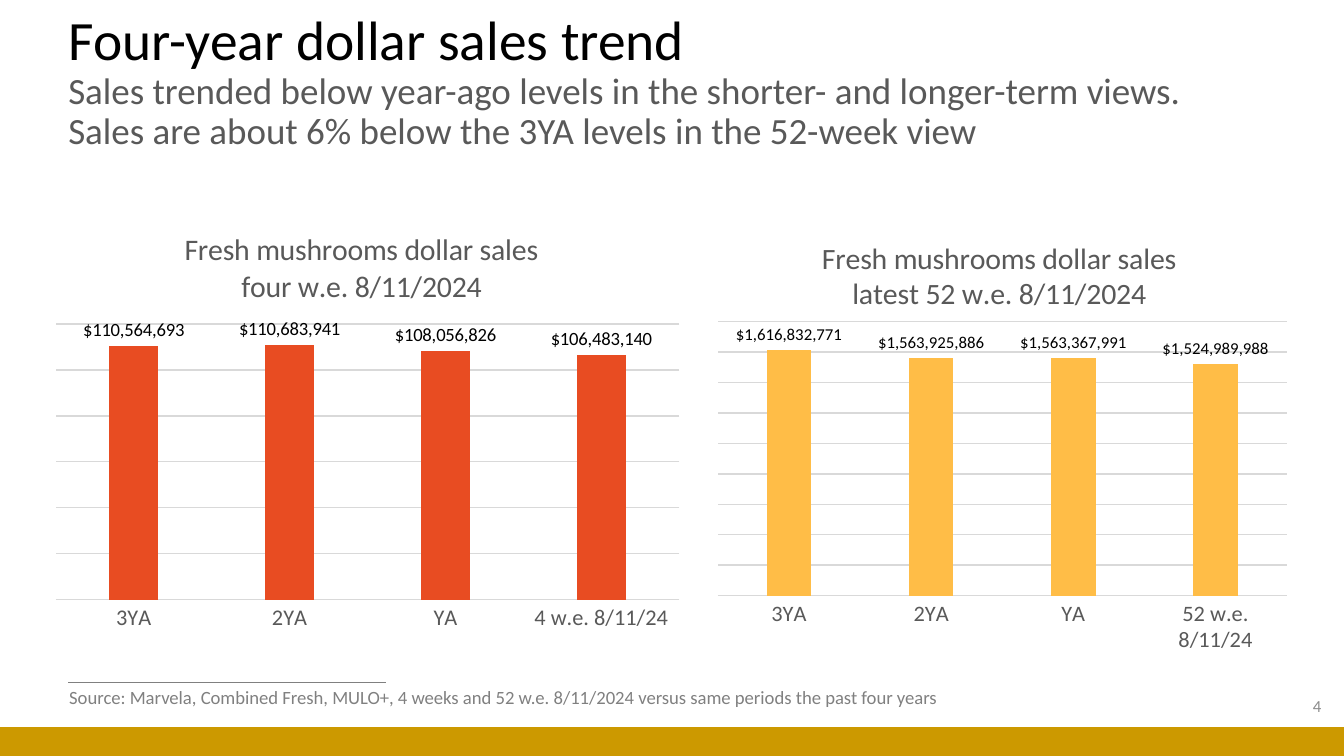
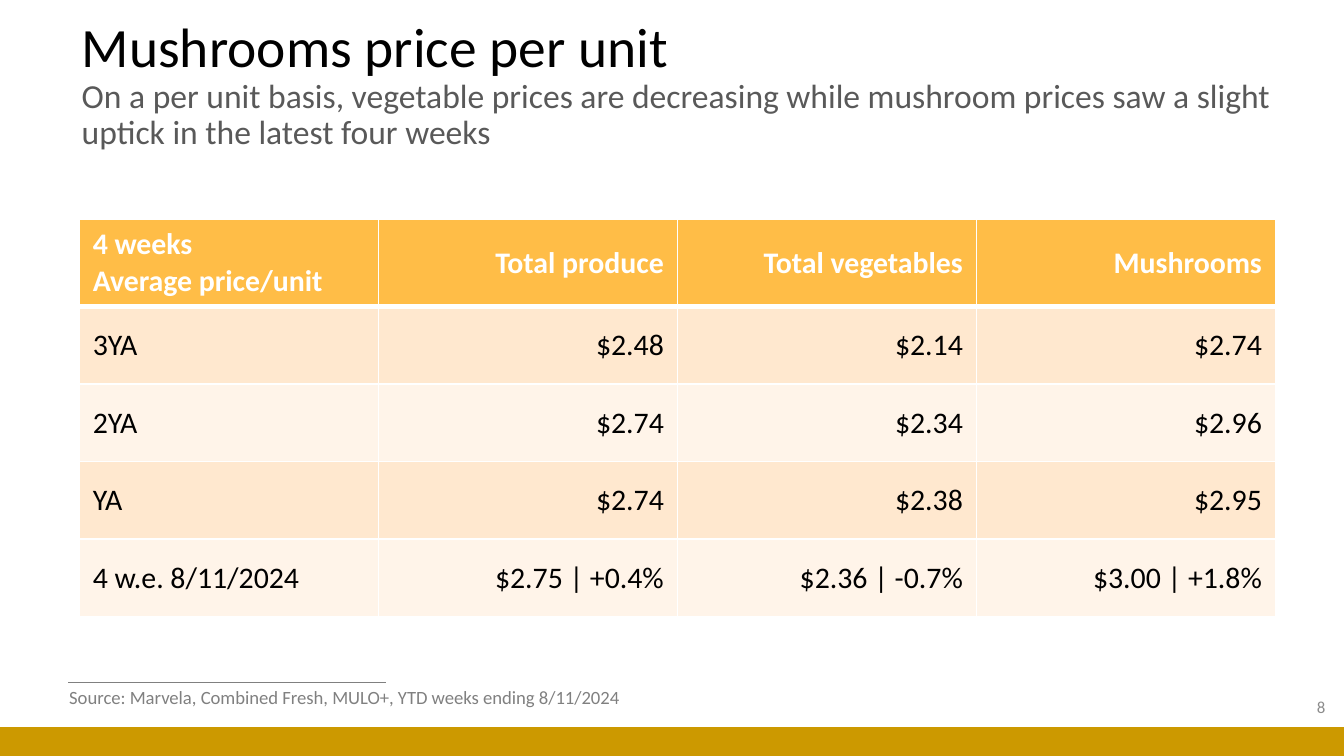
import pptx
import pptx.util
import pptx.chart.data
import pptx.dml.color
import pptx.enum.chart
import pptx.enum.shapes
import pptx.enum.text
import pptx.oxml
import pptx.oxml.ns

Pt = pptx.util.Pt
ALIGN = pptx.enum.text.PP_ALIGN
ANCHOR = pptx.enum.text.MSO_ANCHOR
FONT = "Calibri"
MONEY = r"\$#,##0"
NS = pptx.oxml.ns.nsdecls("a", "c")
COLORS = {
    "title": "000000", "subtitle": "595959", "source": "808080", "number": "8C8C8C",
    "band": "CC9900", "grid": "D9D9D9", "orange": "E84C22", "yellow": "FFBD47",
    "odd": "FFE8CF", "even": "FFF4E9", "white": "FFFFFF",
}


def rgb(name):
    """Return the named colour."""
    return pptx.dml.color.RGBColor.from_string(COLORS[name])


def style_font(font, size, color, bold=False):
    """Apply the deck's typeface with a size, colour and weight."""
    font.name, font.size, font.bold = FONT, Pt(size), bold
    font.color.rgb = rgb(color)


def write(tf, text, size=16, color="title", bold=False, align=ALIGN.LEFT, spacing=None):
    """Add text to the frame's first paragraph, breaking it at newlines."""
    p = tf.paragraphs[0]
    p.alignment, p.line_spacing = align, spacing
    for i, line in enumerate(text.split("\n")):
        if i:
            p.add_line_break()
        if line:
            r = p.add_run()
            r.text = line
            style_font(r.font, size, color, bold)


def add_box(s, box, anchor=ANCHOR.MIDDLE, wrap=True):
    """Add an empty text box and return its frame."""
    tf = s.shapes.add_textbox(*map(Pt, box)).text_frame
    tf.word_wrap, tf.vertical_anchor = wrap, anchor
    return tf


def add_title(s, box, title, subtitle, size):
    """Add the title with its grey subtitle below."""
    tf = add_box(s, box)
    write(tf, title + "\n", size=29.7, spacing=0.9)
    write(tf, subtitle, size=size, color="subtitle", spacing=0.9)


def add_footer(s, source, width, number, number_box):
    """Add the rule, band, source line and slide number."""
    rule = s.shapes.add_connector(
        pptx.enum.shapes.MSO_CONNECTOR.STRAIGHT, Pt(36.7), Pt(365.8), Pt(206.6), Pt(365.8))
    rule.line.color.rgb, rule.line.width = rgb("source"), Pt(0.5)
    rule._element.spPr.append(pptx.oxml.parse_xml(f"<a:effectLst {NS}/>"))
    band = s.shapes.add_shape(
        pptx.enum.shapes.MSO_SHAPE.RECTANGLE, Pt(0), Pt(389.5), Pt(720), Pt(15.5))
    band.shadow.inherit = False
    band.fill.solid()
    band.fill.fore_color.rgb = rgb("band")
    band.line.fill.background()
    write(add_box(s, number_box), str(number), size=9, color="number", align=ALIGN.RIGHT)
    tf = add_box(s, (30, 363.9, width, 19.4), anchor=ANCHOR.TOP, wrap=False)
    tf.auto_size = pptx.enum.text.MSO_AUTO_SIZE.SHAPE_TO_FIT_TEXT
    write(tf, source, size=10, color="source")


def place(parent, before, values, inner=False):
    """Put a manual layout, in chart fractions, before the named child elements."""
    target = '<c:layoutTarget val="inner"/>' if inner else ""
    modes = "".join(f'<c:{k}Mode val="edge"/>' for k in "xy")
    parts = "".join(f'<c:{k} val="{v}"/>' for k, v in zip("xywh", values))
    for old in parent.findall(pptx.oxml.ns.qn("c:layout")):
        parent.remove(old)
    layout = pptx.oxml.parse_xml(
        f"<c:layout {NS}><c:manualLayout>{target}{modes}{parts}</c:manualLayout></c:layout>")
    next(e for e in parent if e.tag in map(pptx.oxml.ns.qn, before)).addprevious(layout)


def add_sales_chart(s, box, title, cats, vals, color, top, step, plot, label_size, title_at=None):
    """Add a column chart of dollar sales."""
    data = pptx.chart.data.CategoryChartData(number_format=MONEY)
    data.categories = cats
    data.add_series("Series 1", vals)
    chart = s.shapes.add_chart(
        pptx.enum.chart.XL_CHART_TYPE.COLUMN_CLUSTERED, *map(Pt, box), data).chart
    style_font(chart.font, 10, "title")
    chart.has_legend = False
    chart.has_title = True
    write(chart.chart_title.text_frame, title, color="subtitle", align=ALIGN.CENTER)
    chart.chart_title.include_in_layout = False
    if title_at:
        place(chart.chart_title._element, ("c:overlay",), title_at)
    area = chart._chartSpace.chart.plotArea
    place(area, ("c:barChart",), plot, inner=True)

    cat, val = chart.category_axis, chart.value_axis
    cat.major_tick_mark = pptx.enum.chart.XL_TICK_MARK.NONE
    style_font(cat.tick_labels.font, 12, "subtitle")
    val.visible = False
    val.minimum_scale, val.maximum_scale, val.major_unit = 0, top, step
    val.has_major_gridlines = True
    for line in (cat.format.line, val.major_gridlines.format.line):
        line.color.rgb, line.width = rgb("grid"), Pt(0.75)

    bars = chart.plots[0]
    bars.gap_width, bars.overlap, bars.vary_by_categories = 219, -27, False
    fill = bars.series[0].format.fill
    fill.solid()
    fill.fore_color.rgb = rgb(color)
    labels = bars.series[0].data_labels
    labels.show_value = True
    labels.number_format, labels.number_format_is_linked = MONEY, False
    labels.position = pptx.enum.chart.XL_LABEL_POSITION.OUTSIDE_END
    style_font(labels.font, label_size, "title")


def add_border(cell, side, width):
    """Draw one white border of a cell."""
    pr = cell._tc.get_or_add_tcPr()
    pr.append(pptx.oxml.parse_xml(
        f'<a:ln{side} {NS} w="{Pt(width)}"><a:solidFill>'
        f'<a:srgbClr val="{COLORS["white"]}"/></a:solidFill></a:ln{side}>'))


def add_price_table(s, box, rows, header_height):
    """Add the price table with a yellow header and banded rows."""
    table = s.shapes.add_table(len(rows), len(rows[0]), *map(Pt, box)).table
    for col in table.columns:
        col.width = Pt(box[2] / len(rows[0]))
    for i, row in enumerate(rows):
        head = i == 0
        table.rows[i].height = Pt(
            header_height if head else (box[3] - header_height) / (len(rows) - 1))
        for j, text in enumerate(row):
            cell = table.cell(i, j)
            cell.vertical_anchor = ANCHOR.MIDDLE
            for side in "LRTB":
                thick = (head and side == "B") or (i == 1 and side == "T")
                add_border(cell, side, 3 if thick else 1)
            cell.fill.solid()
            cell.fill.fore_color.rgb = rgb("yellow" if head else "odd" if i % 2 else "even")
            write(cell.text_frame, text, color="white" if head else "title", bold=head,
                  align=ALIGN.RIGHT if j else ALIGN.LEFT)


def build_sales_slide(s):
    """Build the slide with two sales charts."""
    add_title(s, (29.5, 15.8, 619.2, 56.9), "Four-year dollar sales trend",
              "Sales trended below year-ago levels in the shorter- and longer-term views. "
              "Sales are about 6% below the 3YA levels in the 52-week view", 19.8)
    add_footer(s, "Source: Marvela, Combined Fresh, MULO+, 4 weeks and 52 w.e. 8/11/2024 "
               "versus same periods the past four years", 486, 4, (553, 367.2, 162, 21.6))
    years = ["3YA", "2YA", "YA"]
    add_sales_chart(
        s, (29.5, 111.6, 334.8, 238.3), "Fresh mushrooms dollar sales\nfour w.e. 8/11/2024",
        years + ["4 w.e. 8/11/24"], (110564693, 110683941, 108056826, 106483140),
        "orange", 120e6, 20e6, (0, 0.26, 1, 0.62), 10, title_at=(0.2, 0.04))
    add_sales_chart(
        s, (371.5, 117.4, 327.6, 232.6), "Fresh mushrooms dollar sales\nlatest 52 w.e. 8/11/2024",
        years + ["52 w.e. 8/11/24"], (1616832771, 1563925886, 1563367991, 1524989988),
        "yellow", 1.8e9, 0.2e9, (0.04, 0.24, 0.93, 0.64), 9)


def build_price_slide(s):
    """Build the slide with the price table."""
    add_title(s, (36.7, 26.6, 652.3, 38.9), "Mushrooms price per unit",
              "On a per unit basis, vegetable prices are decreasing while mushroom prices "
              "saw a slight uptick in the latest four weeks", 18)
    add_footer(s, "Source: Marvela, Combined Fresh, MULO+, YTD weeks ending 8/11/2024",
               310.3, 8, (555.1, 367.9, 162, 21.6))
    add_price_table(s, (42.5, 117.4, 640.8, 213.1), [
        ("4 weeks\nAverage price/unit", "Total produce", "Total vegetables", "Mushrooms"),
        ("3YA", "$2.48", "$2.14", "$2.74"),
        ("2YA", "$2.74", "$2.34", "$2.96"),
        ("YA", "$2.74", "$2.38", "$2.95"),
        ("4 w.e. 8/11/2024", "$2.75 | +0.4%", "$2.36 | -0.7%", "$3.00 | +1.8%"),
    ], 46.8)


def main():
    """Build and save the deck."""
    prs = pptx.Presentation()
    prs.slide_width, prs.slide_height = Pt(720), Pt(405)
    for build in (build_sales_slide, build_price_slide):
        build(prs.slides.add_slide(prs.slide_layouts[6]))
    prs.save("out.pptx")


if __name__ == "__main__":
    main()
